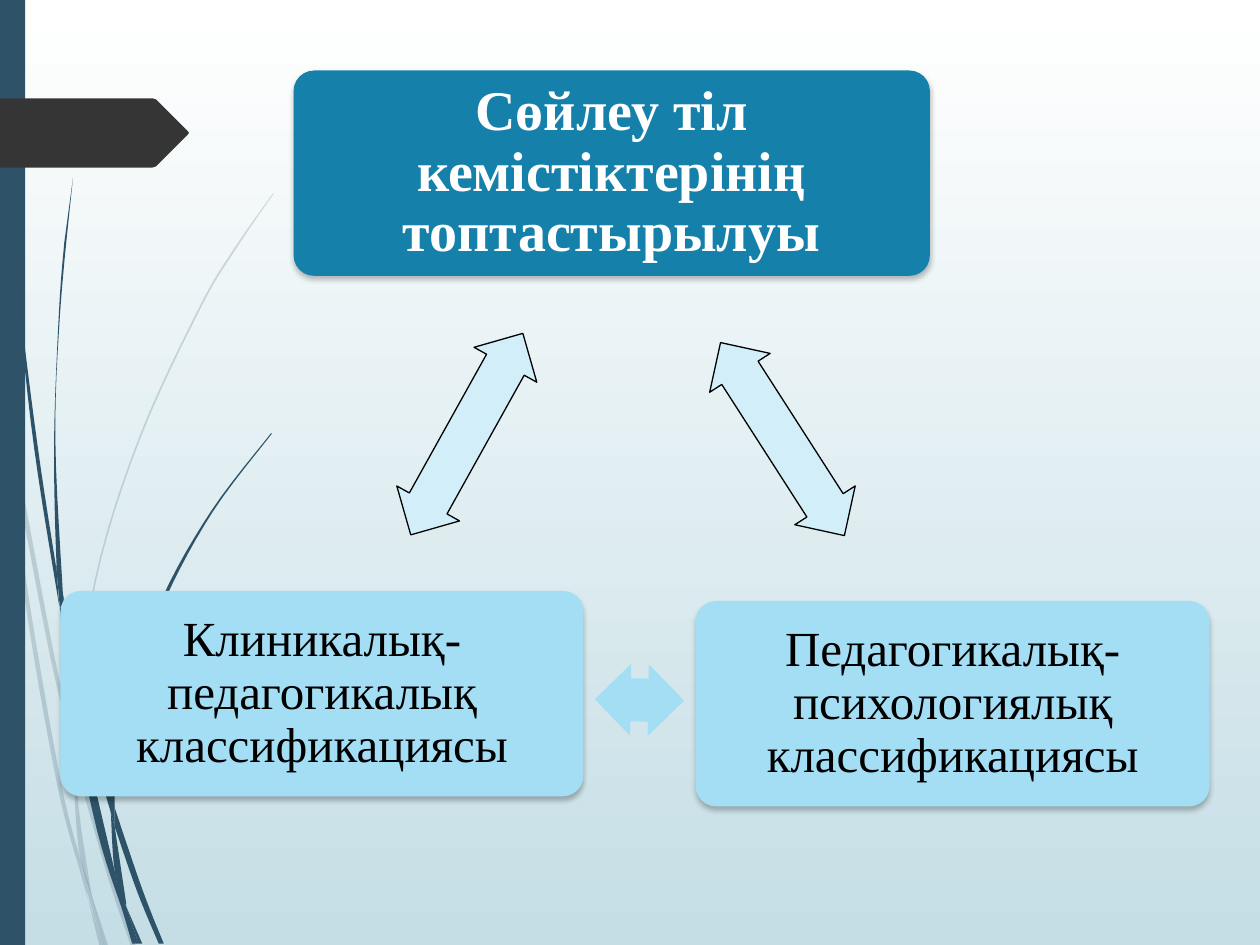
from typing import NamedTuple, Optional

from lxml.etree import SubElement
from pptx import Presentation
from pptx.dml.color import RGBColor
from pptx.enum.shapes import MSO_SHAPE
from pptx.enum.text import MSO_ANCHOR, PP_ALIGN
from pptx.oxml.ns import qn
from pptx.util import Inches, Pt

COLORS = {"top": "FFFFFF", "base": "C5DEE5", "grass": "2E5369", "tag": "353535",
          "head": "1581AA", "card": "A4DEF4", "arrow": "D2EEF9",
          "white": "FFFFFF", "black": "000000"}
FONT = "Times New Roman"
Edge = list[tuple[float, float]]


class Blade(NamedTuple):
    """Outline of a grass blade: one edge out, the other edge back."""
    out: Edge
    back: Edge


class Card(NamedTuple):
    left: float
    top: float
    width: float
    fill: str
    text: str
    size: int
    ink: str
    inset: float


class Arrow(NamedTuple):
    left: float
    top: float
    width: float
    turn: float
    fill: str
    line: Optional[str]


PALE = [
    Blade([(.08, 3.5), (.06, 3.22), (0, 2.82)], [(0, 2.99), (.07, 3.44)]),
    Blade([(.1, 3.45), (.43, 5.2), (.59, 5.86)],
          [(.59, 5.99), (.4, 5.22), (.12, 3.76)]),
    Blade([(.61, 5.96), (.88, 6.92), (1.08, 7.51)],
          [(1.04, 7.51), (.85, 6.94), (.61, 6.1)]),
    Blade([(.83, 7.51), (.86, 7.51)], [(.73, 7.11)]),
    Blade([(.08, 3.5), (.19, 4.7), (.45, 6.21), (.64, 6.93), (.7, 7.14)],
          [(.64, 6.83), (.48, 6.19), (.22, 4.69), (.12, 3.76)]),
    Blade([(.58, 5.99), (.6, 6.46), (.64, 6.83), (.73, 7.11)],
          [(.72, 7.06), (.63, 6.46), (.61, 6.08)]),
    Blade([(.61, 5.96), (.61, 5.84), (.76, 4.62), (1.11, 3.49), (1.59, 2.45),
           (1.87, 1.98), (2.17, 1.54)],
          [(2.17, 1.53), (1.86, 1.97), (1.58, 2.44), (1.1, 3.48), (.75, 4.61),
           (.59, 5.84)]),
    Blade([(.7, 7.14), (.79, 7.51)], [(.82, 7.51)]),
    Blade([(.65, 6.83), (.69, 7.07), (.82, 7.51)],
          [(.83, 7.51), (.73, 7.11), (.67, 6.92)]),
]
DARK = [
    Blade([(.02, 0), (.05, 1.1), (.14, 2.33), (.27, 3.55), (.47, 4.81)],
          [(.45, 4.53), (.3, 3.55), (.15, 2.32), (.06, 1.09), (.03, 0)]),
    Blade([(.5, 4.72), (.77, 5.9), (.88, 6.31)],
          [(.88, 6.45), (.73, 5.92), (.53, 5.05)]),
    Blade([(.91, 6.41), (1.13, 7.06), (1.3, 7.49)],
          [(1.26, 7.49), (1.09, 7.08), (.91, 6.56)]),
    Blade([(.47, 4.77), (.56, 5.57), (.77, 6.59), (.97, 7.22)],
          [(.91, 6.91), (.6, 5.56), (.53, 5.05)]),
    Blade([(.5, 4.72), (.44, 3.49), (.48, 2.45), (.58, 1.41)],
          [(.51, 1.93), (.47, 2.45), (.43, 3.49), (.45, 4.49), (.49, 4.72)]),
    Blade([(1.1, 7.49), (1.13, 7.49)], [(1, 7.19)]),
    Blade([(.47, 4.77), (.53, 5.05)], [(.5, 4.72), (.45, 4.49), (.45, 4.53)]),
    Blade([(.91, 6.33), (1.03, 5.52), (1.31, 4.76), (1.69, 4.06), (2.16, 3.44)],
          [(2.15, 3.44), (1.68, 4.05), (1.29, 4.74), (1.01, 5.51), (.88, 6.31),
           (.91, 6.41)]),
    Blade([(.97, 7.22), (1.05, 7.49)], [(1.08, 7.49)]),
    Blade([(.88, 6.45), (.91, 6.91), (1, 7.19)], [(1, 7.16), (.91, 6.56)]),
    Blade([(.88, 6.45), (.91, 6.56)], [(.91, 6.41), (.88, 6.31)]),
    Blade([(.91, 6.91), (.97, 7.22), (1.08, 7.49)],
          [(1.1, 7.49), (1, 7.19), (.96, 7.06)]),
]
TAG = [(0, .78), (1.21, .78), (1.24, .79), (1.49, 1.04), (1.5, 1.055),
       (1.49, 1.07), (1.24, 1.32), (1.21, 1.33), (0, 1.33)]

HEAD = Card(2.33, .56, 5.05, "head", "Сөйлеу тіл кемістіктерінің топтастырылуы",
            32, "white", .13)
CARDS = [
    Card(5.52, 4.77, 4.08, "card", "Педагогикалық-психологиялық классификациясы",
         28, "black", .12),
    Card(.48, 4.69, 4.15, "card", "Клиникалық-педагогикалық классификациясы",
         28, "black", .12),
]
ARROWS = [
    Arrow(5.3, 3.2, 1.82, 57.3, "arrow", "black"),
    Arrow(4.72, 5.27, .71, 180.9, "card", None),
    Arrow(2.79, 3.16, 1.83, 299.1, "arrow", "black"),
]


def color(name: str) -> RGBColor:
    return RGBColor.from_string(COLORS[name])


def paint(shape, fill: str, line: Optional[str] = None) -> None:
    shape.shadow.inherit = False
    shape.fill.solid()
    shape.fill.fore_color.rgb = color(fill)
    if line:
        shape.line.color.rgb = color(line)
        shape.line.width = Pt(.75)
    else:
        shape.line.fill.background()


def smooth(edge: Edge, steps: int = 6) -> Edge:
    """Points on a Catmull-Rom curve through the edge."""
    if len(edge) < 3:
        return edge
    pts = [edge[0], *edge, edge[-1]]
    curve = [edge[0]]
    for a, b, c, d in zip(pts, pts[1:], pts[2:], pts[3:]):
        for t in (i / steps for i in range(1, steps + 1)):
            curve.append(tuple(
                (2 * q + (r - p) * t + (2 * p - 5 * q + 4 * r - s) * t ** 2
                 + (3 * q - p - 3 * r + s) * t ** 3) / 2
                for p, q, r, s in zip(a, b, c, d)))
    return curve


def trace(shapes, edge: Edge, fill: str, alpha: int = 100) -> None:
    first, *rest = [(Inches(x), Inches(y)) for x, y in edge]
    pen = shapes.build_freeform(*first)
    pen.add_line_segments(rest, close=True)
    shape = pen.convert_to_shape()
    paint(shape, fill)
    if alpha < 100:
        tint = shape._element.spPr.find(qn("a:solidFill"))[0]
        SubElement(tint, qn("a:alpha"), val=str(alpha * 1000))


def draw_card(shapes, card: Card, label=None) -> None:
    left, top, width, height = map(Inches, (card.left, card.top, card.width, 1.63))
    box = shapes.add_shape(MSO_SHAPE.ROUNDED_RECTANGLE, left, top, width, height)
    box.adjustments[0] = .1
    paint(box, card.fill)
    glow = SubElement(box._element.spPr.find(qn("a:effectLst")), qn("a:outerShdw"),
                      blurRad=str(Pt(3)), dist=str(Pt(2)), dir="5400000",
                      rotWithShape="0")
    tint = SubElement(glow, qn("a:srgbClr"), val=COLORS["black"])
    SubElement(tint, qn("a:alpha"), val="25000")

    # Label lies just inside the box
    pad = Inches(.05)
    if label is None:
        label = shapes.add_textbox(0, 0, width, height)
    else:
        box._element.addnext(label._element)
    label.left, label.top = left + pad, top + pad
    label.width, label.height = width - 2 * pad, height - 2 * pad
    frame = label.text_frame
    frame.word_wrap = True
    frame.vertical_anchor = MSO_ANCHOR.MIDDLE
    frame.margin_left = frame.margin_right = Inches(card.inset)
    frame.margin_top = frame.margin_bottom = Inches(card.inset)
    para = frame.paragraphs[0]
    para.alignment = PP_ALIGN.CENTER
    para.line_spacing = .9
    run = para.add_run()
    run.text = card.text
    run.font.name, run.font.size = FONT, Pt(card.size)
    run.font.bold = card is HEAD
    run.font.color.rgb = color(card.ink)


def draw_arrow(shapes, arrow: Arrow) -> None:
    shape = shapes.add_shape(MSO_SHAPE.LEFT_RIGHT_ARROW, Inches(arrow.left),
                             Inches(arrow.top), Inches(arrow.width), Inches(.57))
    shape.adjustments[0], shape.adjustments[1] = .6, .5
    shape.rotation = arrow.turn
    paint(shape, arrow.fill, arrow.line)


def main() -> None:
    deck = Presentation()
    deck.slide_width, deck.slide_height = Inches(10), Inches(7.5)
    slide = deck.slides.add_slide(deck.slide_layouts[5])
    shapes = slide.shapes

    # Backdrop: gradient, grass, side bar and tag
    back = slide.background.fill
    back.gradient()
    back.gradient_angle = 270
    for stop, name in zip(back.gradient_stops, ("top", "base")):
        stop.color.rgb = color(name)
    for blades, alpha in ((PALE, 20), (DARK, 100)):
        for blade in blades:
            trace(shapes, smooth(blade.out) + smooth(blade.back), "grass", alpha)
    bar = shapes.add_shape(MSO_SHAPE.RECTANGLE, 0, 0, Inches(.2), Inches(7.5))
    paint(bar, "grass")
    trace(shapes, TAG, "tag")

    # Diagram: heading, two classes and the arrows between them
    draw_card(shapes, HEAD, shapes.title)
    for card in CARDS:
        draw_card(shapes, card)
    for arrow in ARROWS:
        draw_arrow(shapes, arrow)

    deck.save("out.pptx")


if __name__ == "__main__":
    main()
